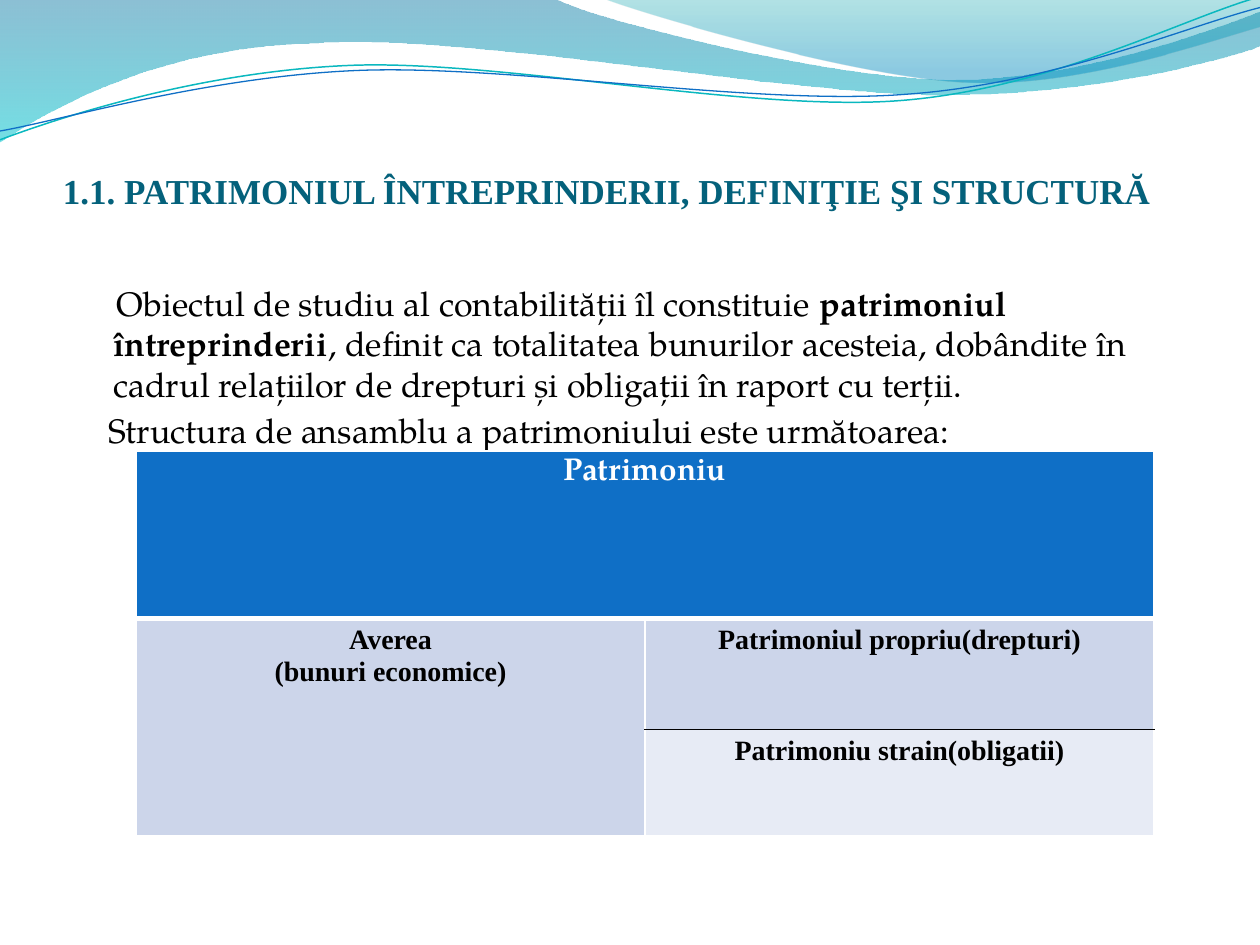
from lxml import etree
from pptx import Presentation
from pptx.dml.color import RGBColor
from pptx.enum.lang import MSO_LANGUAGE_ID
from pptx.enum.text import MSO_ANCHOR, PP_ALIGN
from pptx.oxml.ns import qn
from pptx.util import Inches, Pt

COLORS = {
    "title": "04617B", "text": "000000", "white": "FFFFFF", "header": "0F6FC6",
    "band": "CCD5EA", "light_band": "E7EBF5", "teal_line": "0AB8BF",
    "deep_blue": "0074A1", "cyan": "00C6CF", "teal": "00A1A9", "blue": "008BBF",
}
SERIF = "Times New Roman"
BOOK = "TeX Gyre Pagella"


def add_text(paragraph, text, size=16, font=SERIF, color="text", bold=False, align=None):
    run = paragraph.add_run()
    run.text = text
    run.font.size = Pt(size)
    run.font.name = font
    run.font.bold = bold
    run.font.language_id = MSO_LANGUAGE_ID.ROMANIAN
    run.font.color.rgb = RGBColor.from_string(COLORS[color])
    if align is not None:
        paragraph.alignment = align


def add_curve(shapes, segments, closed):
    """Draw a path of points (2 numbers) and cubic curves (6 numbers), in inches."""
    points = [(round(segment[i] * 100), round(segment[i + 1] * 100))
              for segment in segments for i in range(0, len(segment), 2)]
    builder = shapes.build_freeform(*points[0], scale=Inches(0.01))
    builder.add_line_segments(points[1:], close=closed)
    shape = builder.convert_to_shape()
    shape.shadow.inherit = False
    # Join each three line steps of a curve into one cubic step
    steps = iter(list(shape.element.spPr.iter(qn("a:lnTo"))))
    for segment in segments[1:]:
        step = next(steps)
        if len(segment) == 6:
            curve = etree.Element(qn("a:cubicBezTo"))
            step.addprevious(curve)
            for part in (step, next(steps), next(steps)):
                curve.append(part[0])
                part.getparent().remove(part)
    return shape


presentation = Presentation()
presentation.slide_width = Inches(10)
presentation.slide_height = Inches(7.5)
slide = presentation.slides.add_slide(presentation.slide_layouts[6])

# Translucent waves: path, then (position, colour, opacity %) of each gradient stop
waves = [
    ([(0, 0), (4.4, -0.01), (4.76, 0.17, 6.64, 0.63, 7.58, 0.63),
      (8.53, 0.63, 9.58, 0.26, 10, 0.09), (10.01, 0.36),
      (9.83, 0.44, 8.7, 0.76, 7.46, 0.75), (6.22, 0.75, 3.82, 0.28, 2.57, 0.34),
      (1.29, 0.36, 0.46, 0.83, -0.01, 1.13), (0, 0)],
     [(0, "deep_blue", 45), (1, "cyan", 55)]),
    ([(4.79, -0.01), (5.09, 0.11, 6.82, 0.62, 7.69, 0.65),
      (8.56, 0.69, 9.61, 0.32, 10, 0.21), (10, 0), (4.79, -0.01)],
     [(0, "teal", 30), (0.8, "blue", 45)]),
]
for path_segments, stops in waves:
    wave = add_curve(slide.shapes, path_segments, closed=True)
    wave.line.fill.background()
    wave.fill.gradient()
    wave.fill.gradient_angle = 270
    for stop, (position, color, opacity) in zip(wave.fill.gradient_stops, stops):
        stop.position = position
        stop.color.rgb = RGBColor.from_string(COLORS[color])
    color_elements = wave.element.spPr.iter(qn("a:srgbClr"))
    for element, (position, color, opacity) in zip(color_elements, stops):
        etree.SubElement(element, qn("a:alpha")).set("val", str(opacity * 1000))

# Thin wave lines
wave_lines = [
    ([(0, 1.11), (0.48, 0.93, 1.58, 0.57, 2.77, 0.52),
      (3.95, 0.47, 5.93, 0.89, 7.13, 0.8), (8.33, 0.71, 9.38, 0.15, 9.98, -0.02)],
     "teal_line", 0.85),
    ([(0, 1.04), (0.47, 0.96, 1.64, 0.61, 2.83, 0.56),
      (4.03, 0.51, 5.97, 0.84, 7.17, 0.75), (8.36, 0.67, 9.41, 0.21, 10, 0.06)],
     "header", 0.75),
]
for path_segments, color, width in wave_lines:
    wave_line = add_curve(slide.shapes, path_segments, closed=False)
    wave_line.fill.background()
    wave_line.line.color.rgb = RGBColor.from_string(COLORS[color])
    wave_line.line.width = Pt(width)

# Title
title = slide.shapes.add_textbox(Inches(0.5), Inches(0.77), Inches(9), Inches(1.25)).text_frame
title.word_wrap = True
title.vertical_anchor = MSO_ANCHOR.BOTTOM
title.margin_left = title.margin_right = 0
title.margin_bottom = Inches(0.34)
add_text(title.paragraphs[0], "1.1. PATRIMONIUL ÎNTREPRINDERII, DEFINIŢIE ŞI STRUCTURĂ",
         size=20, color="title", bold=True)

# Body: first-line indent and (text, bold) runs of each paragraph
body_paragraphs = [
    (0.03, [("Obiectul de studiu al contabilităţii îl constituie ", False),
            ("patrimoniul întreprinderii", True),
            (", definit ca totalitatea bunurilor acesteia, dobândite în cadrul relaţiilor "
             "de drepturi şi obligaţii în raport cu terţii.", False)]),
    (-0.04, [("Structura de ansamblu a patrimoniului este următoarea:", False)]),
]
body = slide.shapes.add_textbox(Inches(0.5), Inches(2.12), Inches(9), Inches(4.8)).text_frame
body.word_wrap = True
body.margin_top = Inches(0.12)
for index, (indent, runs) in enumerate(body_paragraphs):
    paragraph = body.add_paragraph() if index else body.paragraphs[0]
    paragraph.space_before = Pt(3)
    properties = paragraph._p.get_or_add_pPr()
    properties.set("marL", str(Inches(0.3)))
    properties.set("indent", str(Inches(indent)))
    for text, bold in runs:
        add_text(paragraph, text, size=19.4, font=BOOK, bold=bold)

# Table
table = slide.shapes.add_table(3, 2, Inches(1.08), Inches(3.58), Inches(8.08), Inches(3.05)).table
for row, height in zip(table.rows, (1.33, 0.88, 0.84)):
    row.height = Inches(height)
table.cell(0, 0).merge(table.cell(0, 1))
table.cell(1, 0).merge(table.cell(2, 0))

fills = [["header", "header"], ["band", "band"], ["band", "light_band"]]
borders = {(0, 0): {"lnB": ("white", 3)}, (0, 1): {"lnB": ("white", 3)},
           (1, 0): {"lnT": ("white", 3)},
           (1, 1): {"lnT": ("white", 3), "lnB": ("text", 1)},
           (2, 1): {"lnT": ("text", 1)}}
for row in range(3):
    for column in range(2):
        cell = table.cell(row, column)
        cell_properties = cell._tc.get_or_add_tcPr()
        for side in ("lnL", "lnR", "lnT", "lnB"):
            color, width = borders.get((row, column), {}).get(side, ("white", 1))
            border = etree.SubElement(cell_properties, qn("a:" + side), w=str(Pt(width)))
            solid = etree.SubElement(border, qn("a:solidFill"))
            etree.SubElement(solid, qn("a:srgbClr"), val=COLORS[color])
        cell.fill.solid()
        cell.fill.fore_color.rgb = RGBColor.from_string(COLORS[fills[row][column]])

# Table text
add_text(table.cell(0, 0).text_frame.paragraphs[0], "Patrimoniu", size=18, font=BOOK,
         color="white", bold=True, align=PP_ALIGN.CENTER)
labels = {(1, 0): ["Averea", "(bunuri economice)"],
          (1, 1): ["Patrimoniul propriu(drepturi)"],
          (2, 1): ["Patrimoniu strain(obligatii)"]}
for position, lines in labels.items():
    frame = table.cell(*position).text_frame
    for index, line in enumerate(lines):
        paragraph = frame.add_paragraph() if index else frame.paragraphs[0]
        add_text(paragraph, line, bold=True, align=PP_ALIGN.CENTER)

presentation.save("out.pptx")
